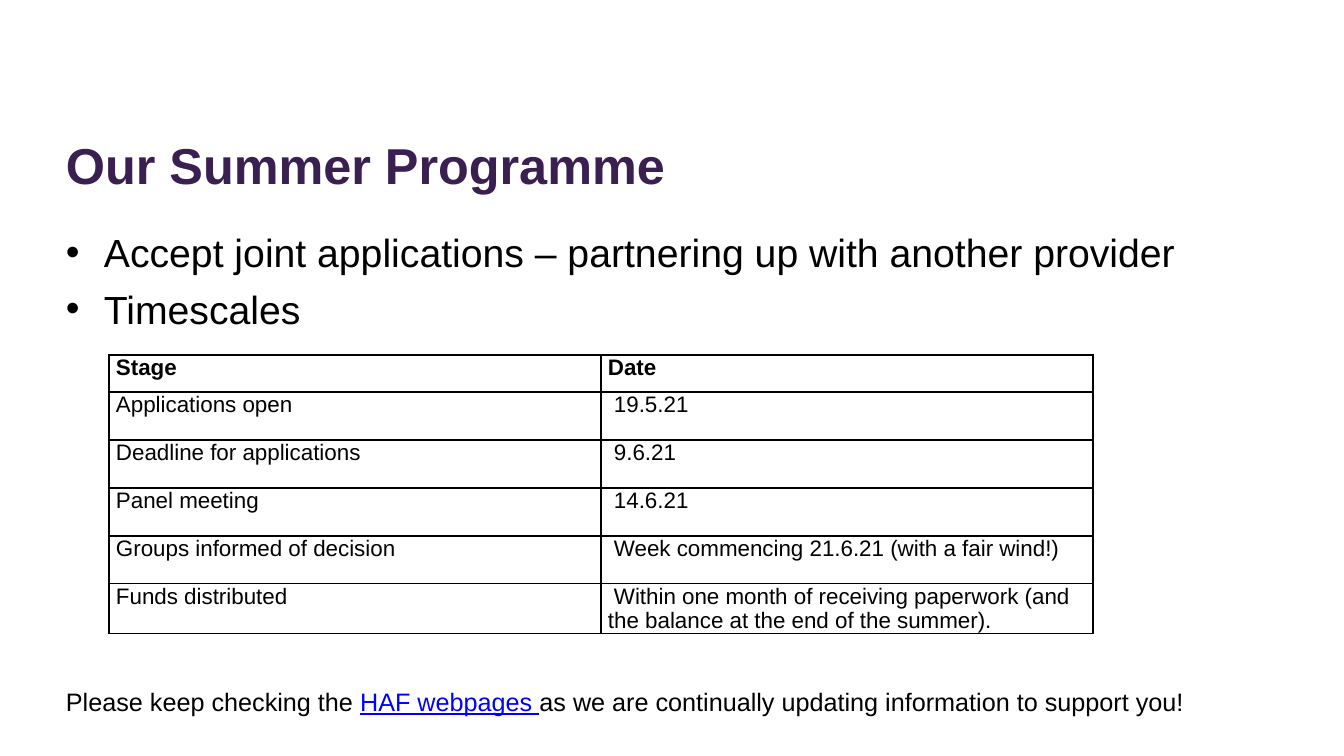
from dataclasses import dataclass

from lxml.etree import SubElement
from pptx import Presentation
from pptx.dml.color import RGBColor
from pptx.enum.text import MSO_ANCHOR, MSO_AUTO_SIZE, PP_ALIGN
from pptx.oxml.ns import qn
from pptx.util import Pt

EMU_PER_INCH = 914400
PX_PER_INCH = 100.8


@dataclass(frozen=True)
class Theme:
    font: str = "Arial"
    ink: str = "000000"
    heading: str = "3A2050"
    link: str = "0000FF"
    title_size: int = 36
    bullet_size: int = 28
    note_size: int = 18
    table_size: int = 16
    bullet_gap: int = 7


THEME = Theme()

BULLETS = [
    "Accept joint applications – partnering up with another provider",
    "Timescales",
]
TIMESCALES = [
    ("Stage", "Date"),
    ("Applications open", "19.5.21"),
    ("Deadline for applications", "9.6.21"),
    ("Panel meeting", "14.6.21"),
    ("Groups informed of decision", "Week commencing 21.6.21 (with a fair wind!)"),
    ("Funds distributed",
     "Within one month of receiving paperwork (and the balance at the end of the summer)."),
]


def px(length):
    return round(length * EMU_PER_INCH / PX_PER_INCH)


def write(para, text, size, color=THEME.ink, bold=False, underline=False):
    span = para.add_run()
    span.text = text
    font = span.font
    font.name = THEME.font
    font.size = Pt(size)
    font.bold = bold
    font.underline = underline
    font.color.rgb = RGBColor.from_string(color)


def indent(para, first, left=0):
    properties = para._p.get_or_add_pPr()
    properties.set("marL", str(px(left)))
    properties.set("indent", str(px(first)))
    return properties


def prepare_frame(frame, top):
    frame.word_wrap = True
    frame.auto_size = MSO_AUTO_SIZE.NONE
    frame.vertical_anchor = MSO_ANCHOR.TOP
    frame.margin_left = frame.margin_right = px(10)
    frame.margin_top, frame.margin_bottom = px(top), 0


def add_frame(page, box, top):
    frame = page.shapes.add_textbox(*map(px, box)).text_frame
    prepare_frame(frame, top)
    return frame


def place_title(page, box, text):
    title = page.shapes.title
    title.left, title.top, title.width, title.height = map(px, box)
    prepare_frame(title.text_frame, top=10)
    para = title.text_frame.paragraphs[0]
    para.alignment = PP_ALIGN.LEFT
    write(para, text, size=THEME.title_size, color=THEME.heading, bold=True)


def add_bullets(page, box, items):
    frame = add_frame(page, box, top=8)
    for index, item in enumerate(items):
        para = frame.add_paragraph() if index else frame.paragraphs[0]
        if index:
            para.space_before = Pt(THEME.bullet_gap)
        properties = indent(para, first=-38, left=38)
        SubElement(properties, qn("a:buFont"), typeface=THEME.font)
        SubElement(properties, qn("a:buChar"), char="•")
        write(para, item, size=THEME.bullet_size)


def outline_cell(cell):
    properties = cell._tc.get_or_add_tcPr()
    for side in ("a:lnL", "a:lnR", "a:lnT", "a:lnB"):
        line = SubElement(properties, qn(side), w=str(Pt(1)))
        fill = SubElement(line, qn("a:solidFill"))
        SubElement(fill, qn("a:srgbClr"), val=THEME.ink)


def add_timescales(page, box, rows, header_height):
    left, top, width, height = box
    row_height = (height - header_height) // (len(rows) - 1)
    table = page.shapes.add_table(len(rows), len(rows[0]), *map(px, box)).table
    table.first_row = table.horz_banding = False
    for column in table.columns:
        column.width = px(width // len(rows[0]))
    for row_index, row in enumerate(rows):
        header = row_index == 0
        table.rows[row_index].height = px(header_height if header else row_height)
        for column_index, text in enumerate(row):
            cell = table.cell(row_index, column_index)
            outline_cell(cell)
            cell.fill.background()
            cell.margin_left = cell.margin_right = px(7)
            cell.margin_top = cell.margin_bottom = 0
            para = cell.text_frame.paragraphs[0]
            if column_index and not header:
                indent(para, first=6)
            write(para, text, size=THEME.table_size, bold=header)


def add_note(page, box):
    para = add_frame(page, box, top=5).paragraphs[0]
    write(para, "Please keep checking the ", size=THEME.note_size)
    write(para, "HAF webpages ", size=THEME.note_size, color=THEME.link, underline=True)
    write(para, "as we are continually updating information to support you!",
          size=THEME.note_size)


def main():
    deck = Presentation()
    deck.slide_width, deck.slide_height = px(1344), px(756)
    page = deck.slides.add_slide(deck.slide_layouts[5])
    place_title(page, (56, 124, 1243, 66), "Our Summer Programme")
    add_bullets(page, (56, 220, 1243, 120), BULLETS)
    add_timescales(page, (109, 355, 984, 277), TIMESCALES, header_height=37)
    add_note(page, (56, 681, 1243, 40))
    deck.save("out.pptx")


if __name__ == "__main__":
    main()
